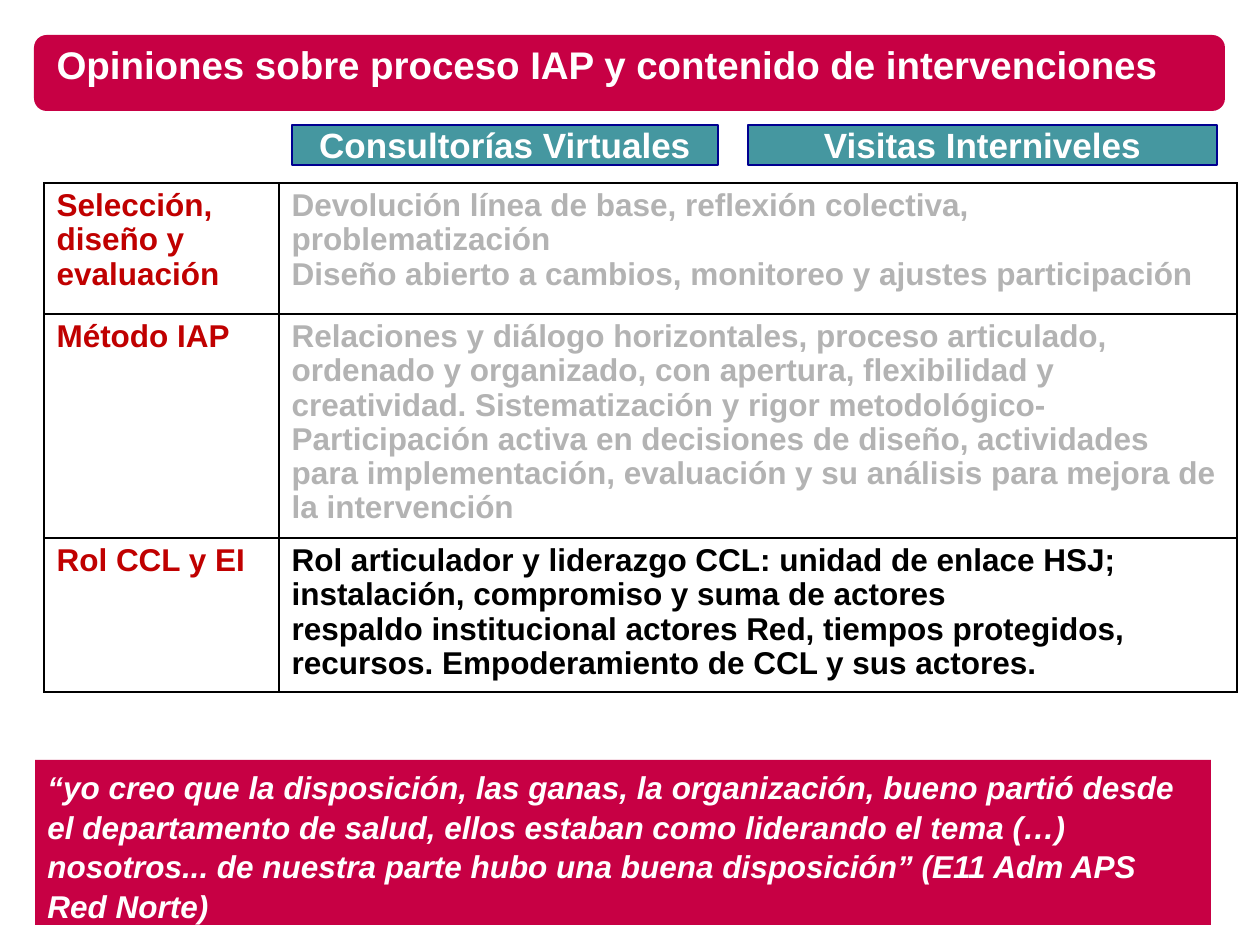
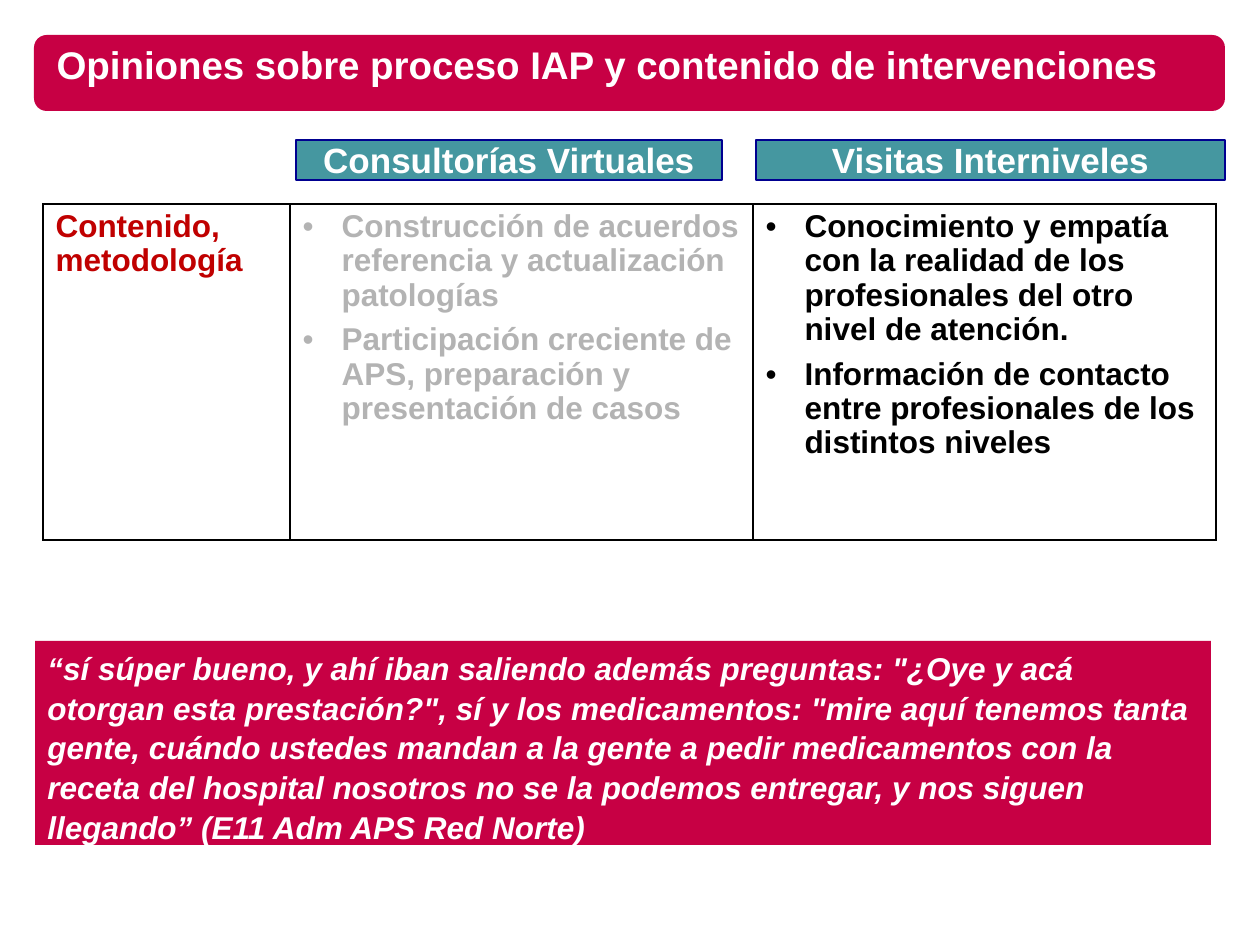
"""Build two slides of opinions on the IAP process and the interventions."""
from dataclasses import dataclass

from lxml import etree
from pptx import Presentation
from pptx import util as u
from pptx.dml import color
from pptx.enum import shapes, text
from pptx.oxml import ns

PX_PER_INCH = 126
FONT = "Arial"
CRIMSON, TEAL, NAVY = "C70044", "4597A0", "000090"
RED, GREY, BLACK, WHITE = "C00000", "B3B3B3", "000000", "FFFFFF"
TITLE = "Opiniones sobre proceso IAP y contenido de intervenciones"
TITLE_INDENT, BULLET_INDENT = 62, 39
HEADING_HEIGHT = 40
HEADINGS = (("Consultorías Virtuales", 426), ("Visitas Interniveles", 469))


@dataclass(frozen=True)
class Box:
    """A rectangle in px."""
    left: int
    top: int
    width: int
    height: int


@dataclass(frozen=True)
class Entry:
    """The paragraphs of one table cell and their look."""
    lines: tuple[str, ...]
    hue: str
    bulleted: bool = False


@dataclass(frozen=True)
class Opinion:
    """The content and placing of one slide."""
    heading_lefts: tuple[int, int]
    heading_top: int
    table_left: int
    table_top: int
    columns: tuple[int, ...]
    row_heights: tuple[int, ...]
    rows: tuple[tuple[Entry, ...], ...]
    quote: str
    quote_box: Box


BAND = Box(34, 35, 1191, 76)
TITLE_BOX = Box(44, 35, 1216, 89)

OPINIONS = (
    Opinion(
        (292, 748), 125, 44, 183, (235, 958), (131, 224, 154),
        (
            (Entry(("Selección, diseño y evaluación",), RED),
             Entry(("Devolución línea de base, reflexión colectiva, problematización",
                    "Diseño abierto a cambios, monitoreo y ajustes participación"), GREY)),
            (Entry(("Método IAP",), RED),
             Entry(("Relaciones y diálogo horizontales, proceso articulado, ordenado y "
                    "organizado, con apertura, flexibilidad y creatividad. "
                    "Sistematización y rigor metodológico-",
                    "Participación activa en decisiones de diseño, actividades para "
                    "implementación, evaluación y su análisis para mejora de la "
                    "intervención"), GREY)),
            (Entry(("Rol CCL y EI",), RED),
             Entry(("Rol articulador y liderazgo CCL: unidad de enlace HSJ; "
                    "instalación, compromiso y suma de actores",
                    "respaldo institucional actores Red, tiempos protegidos, recursos. "
                    "Empoderamiento de CCL y sus actores."), BLACK)),
        ),
        "“yo creo que la disposición, las ganas, la organización, bueno partió desde el "
        "departamento de salud, ellos estaban como liderando el tema (…) nosotros... de "
        "nuestra parte hubo una buena disposición” (E11 Adm APS Red Norte)",
        Box(35, 760, 1176, 165),
    ),
    Opinion(
        (296, 756), 140, 43, 204, (247, 463, 463), (336,),
        (
            (Entry(("Contenido, metodología",), RED),
             Entry(("Construcción de acuerdos referencia y actualización patologías",
                    "Participación creciente de APS, preparación y presentación de casos"),
                   GREY, True),
             Entry(("Conocimiento y empatía con la realidad de los profesionales del "
                    "otro nivel de atención.",
                    "Información de contacto entre profesionales de los distintos "
                    "niveles"), BLACK, True)),
        ),
        "“sí súper bueno, y ahí iban saliendo además preguntas: \"¿Oye y acá otorgan esta "
        "prestación?\", sí y los medicamentos: \"mire aquí tenemos tanta gente, cuándo "
        "ustedes mandan a la gente a pedir medicamentos con la receta del hospital "
        "nosotros no se la podemos entregar, y nos siguen llegando” (E11 Adm APS Red "
        "Norte)",
        Box(35, 641, 1176, 204),
    ),
)


def px(length: int) -> u.Emu:
    """Turn px into EMU."""
    return u.Emu(round(length * u.Inches(1) / PX_PER_INCH))


def rgb(hue: str) -> color.RGBColor:
    """Turn a hex string into a colour."""
    return color.RGBColor.from_string(hue)


def format_text(frame, size: int, hue: str, align=text.PP_ALIGN.LEFT,
                italic: bool = False, spacing: float = 1.0) -> None:
    """Give every paragraph and run of a frame the same look."""
    for paragraph in frame.paragraphs:
        paragraph.alignment = align
        paragraph.line_spacing = spacing
        for run in paragraph.runs:
            run.font.name = FONT
            run.font.size = u.Pt(size)
            run.font.bold = True
            run.font.italic = italic
            run.font.color.rgb = rgb(hue)


def hang(paragraph, indent: int):
    """Set a hanging indent and return the paragraph properties."""
    properties = paragraph._p.get_or_add_pPr()
    properties.set("marL", str(px(indent)))
    properties.set("indent", str(-px(indent)))
    return properties


def add_panel(slide, kind, box: Box, fill: str, outline: str | None = None):
    """Add a filled preset shape without shadow."""
    panel = slide.shapes.add_shape(
        kind, px(box.left), px(box.top), px(box.width), px(box.height))
    panel.shadow.inherit = False
    panel.fill.solid()
    panel.fill.fore_color.rgb = rgb(fill)
    if outline:
        panel.line.color.rgb = rgb(outline)
        panel.line.width = u.Pt(0.75)
    else:
        panel.line.fill.background()
    panel.text_frame.word_wrap = True
    return panel


def add_band_to_layout(slide) -> None:
    """Put the title band behind everything on the slide's layout."""
    band = add_panel(slide, shapes.MSO_SHAPE.ROUNDED_RECTANGLE, BAND, CRIMSON).element
    band.nvSpPr.cNvPr.set("id", "20")
    slide.slide_layout.shapes.element.insert(2, band)


def set_title(slide) -> None:
    """Fill and place the title placeholder."""
    title = slide.shapes.title
    title.left, title.top = px(TITLE_BOX.left), px(TITLE_BOX.top)
    title.width, title.height = px(TITLE_BOX.width), px(TITLE_BOX.height)
    frame = title.text_frame
    frame.text = TITLE
    frame.auto_size = text.MSO_AUTO_SIZE.NONE
    frame.vertical_anchor = text.MSO_ANCHOR.TOP
    format_text(frame, 22, WHITE)
    hang(frame.paragraphs[0], TITLE_INDENT)


def add_borders(cell) -> None:
    """Draw a black 1 pt line on all four sides of a cell."""
    properties = cell._tc.get_or_add_tcPr()
    for position, side in enumerate(("lnL", "lnR", "lnT", "lnB")):
        line = etree.Element(ns.qn(f"a:{side}"), w=str(u.Pt(1)))
        fill = etree.SubElement(line, ns.qn("a:solidFill"))
        etree.SubElement(fill, ns.qn("a:srgbClr"), val=BLACK)
        properties.insert(position, line)


def fill_cell(cell, entry: Entry) -> None:
    """Write an entry into a table cell."""
    cell.fill.background()
    add_borders(cell)
    frame = cell.text_frame
    frame.text = "\n".join(entry.lines)
    format_text(frame, 18, entry.hue, spacing=0.97)
    if entry.bulleted:
        for paragraph in frame.paragraphs:
            paragraph.space_after = u.Pt(6)
            properties = hang(paragraph, BULLET_INDENT)
            etree.SubElement(properties, ns.qn("a:buFont"), typeface=FONT)
            etree.SubElement(properties, ns.qn("a:buChar"), char="•")


def add_opinion_table(slide, opinion: Opinion) -> None:
    """Add the table of opinions."""
    table = slide.shapes.add_table(
        len(opinion.rows), len(opinion.columns),
        px(opinion.table_left), px(opinion.table_top),
        px(sum(opinion.columns)), px(sum(opinion.row_heights))).table
    table.first_row = table.horz_banding = False
    for column, width in zip(table.columns, opinion.columns):
        column.width = px(width)
    for row, height, entries in zip(table.rows, opinion.row_heights, opinion.rows):
        row.height = px(height)
        for cell, entry in zip(row.cells, entries):
            fill_cell(cell, entry)


def add_headings(slide, opinion: Opinion) -> None:
    """Add the two intervention headings above the table."""
    for left, (label, width) in zip(opinion.heading_lefts, HEADINGS):
        box = Box(left, opinion.heading_top, width, HEADING_HEIGHT)
        heading = add_panel(slide, shapes.MSO_SHAPE.RECTANGLE, box, TEAL, NAVY)
        heading.text_frame.text = label
        heading.text_frame.vertical_anchor = text.MSO_ANCHOR.MIDDLE
        format_text(heading.text_frame, 20, WHITE, text.PP_ALIGN.CENTER)


def add_quote(slide, opinion: Opinion) -> None:
    """Add the interview quote below the table."""
    quote = add_panel(slide, shapes.MSO_SHAPE.RECTANGLE, opinion.quote_box, CRIMSON)
    frame = quote.text_frame
    frame.text = opinion.quote
    frame.vertical_anchor = text.MSO_ANCHOR.TOP
    frame.auto_size = text.MSO_AUTO_SIZE.SHAPE_TO_FIT_TEXT
    format_text(frame, 18, WHITE, italic=True, spacing=1.05)


def main() -> None:
    """Build and save the presentation."""
    deck = Presentation()
    deck.slide_width, deck.slide_height = px(1260), px(945)
    title_only = deck.slide_layouts[5]
    for number, opinion in enumerate(OPINIONS):
        slide = deck.slides.add_slide(title_only)
        if number == 0:
            add_band_to_layout(slide)
        set_title(slide)
        add_opinion_table(slide, opinion)
        add_headings(slide, opinion)
        add_quote(slide, opinion)
    deck.save("out.pptx")


if __name__ == "__main__":
    main()
